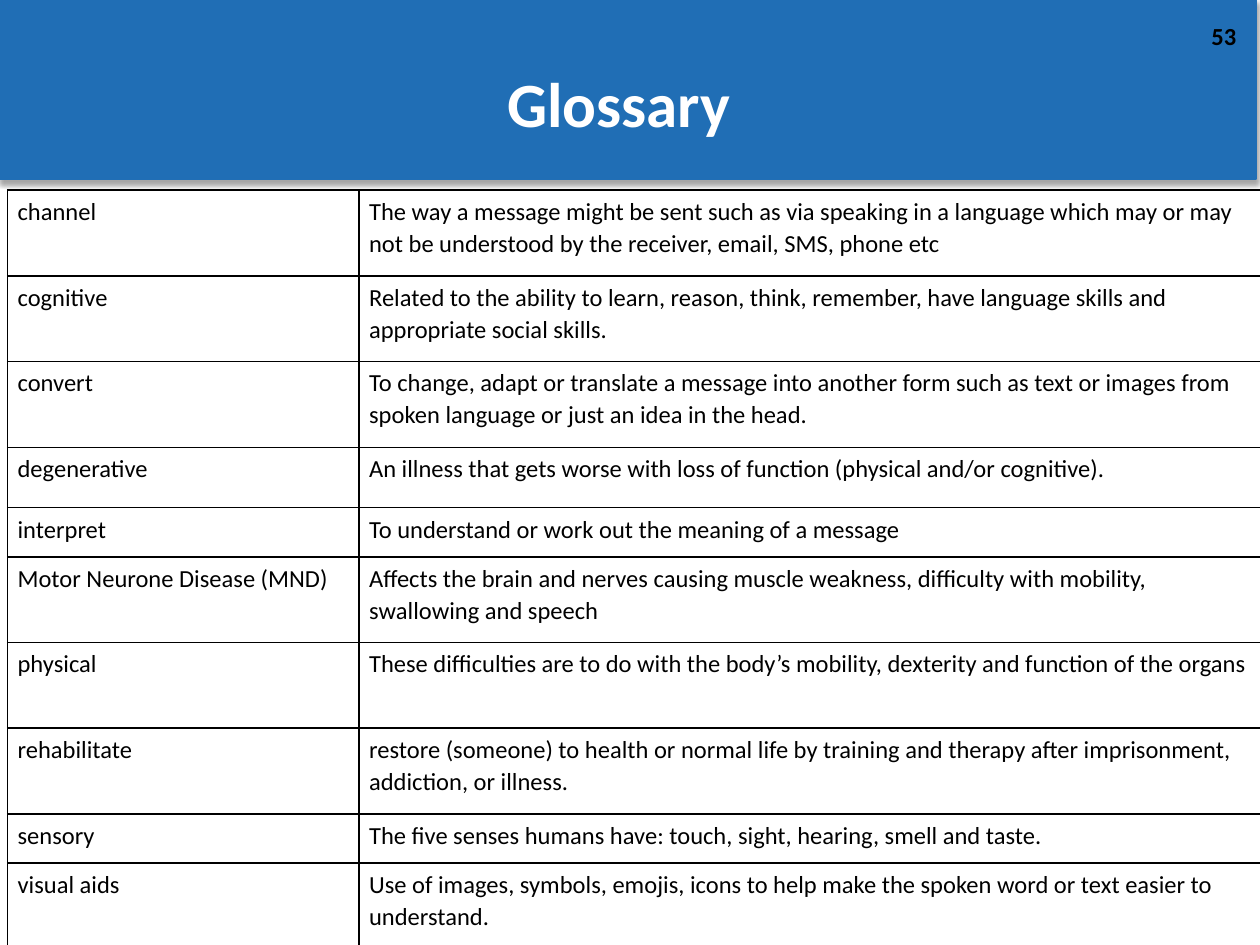
from dataclasses import dataclass

from lxml.etree import SubElement
from pptx import Presentation
from pptx.dml.color import RGBColor
from pptx.enum.shapes import MSO_SHAPE as Shape
from pptx.enum.text import MSO_ANCHOR as Anchor, PP_ALIGN as Align
from pptx.oxml.ns import qn
from pptx.util import Inches, Pt


@dataclass(frozen=True)
class Theme:
    font: str = "Calibri"
    banner: RGBColor = RGBColor(0x20, 0x6E, 0xB5)
    ink: RGBColor = RGBColor(0, 0, 0)
    paper: RGBColor = RGBColor(0xFF, 0xFF, 0xFF)
    title_size: Pt = Pt(36)
    body_size: Pt = Pt(14)
    rule_width: Pt = Pt(1)


THEME = Theme()
COLUMN_WIDTHS = (2.79, 7.16)
TALL, MEDIUM, SHORT = 0.68, 0.48, 0.39
GLOSSARY = [
    (TALL, "channel", "The way a message might be sent such as via speaking in a language "
     "which may or may not be understood by the receiver, email, SMS, phone etc"),
    (TALL, "cognitive", "Related to the ability to learn, reason, think, remember, "
     "have language skills and appropriate social skills."),
    (TALL, "convert", "To change, adapt or translate a message into another form such as "
     "text or images from spoken language or just an idea in the head."),
    (MEDIUM, "degenerative",
     "An illness that gets worse with loss of function (physical and/or cognitive)."),
    (SHORT, "interpret", "To understand or work out the meaning of a message"),
    (TALL, "Motor Neurone Disease (MND)", "Affects the brain and nerves causing muscle "
     "weakness, difficulty with mobility, swallowing and speech"),
    (TALL, "physical", "These difficulties are to do with the body’s mobility, "
     "dexterity and function of the organs"),
    (TALL, "rehabilitate", "restore (someone) to health or normal life by training and "
     "therapy after imprisonment, addiction, or illness."),
    (SHORT, "sensory", "The five senses humans have: touch, sight, hearing, smell and taste."),
    (TALL, "visual aids", "Use of images, symbols, emojis, icons to help make the spoken "
     "word or text easier to understand."),
]


def set_all(target, values):
    for name, value in values.items():
        setattr(target, name, value)


def write(frame, text, size, color, bold=False, **para_format):
    para = frame.paragraphs[0]
    set_all(para, para_format)
    span = para.add_run()
    span.text = text
    set_all(span.font, {"name": THEME.font, "size": size, "bold": bold})
    span.font.color.rgb = color


def add_shadow(shape):
    """Give the shape a soft shadow that falls straight down."""
    shape.shadow.inherit = False
    effects = shape._element.spPr.find(qn("a:effectLst"))
    shadow = SubElement(effects, qn("a:outerShdw"), blurRad=str(Pt(3.1)),
                        dist=str(Pt(1.8)), dir="5400000", rotWithShape="0")
    color = SubElement(shadow, qn("a:srgbClr"), val=str(THEME.ink))
    SubElement(color, qn("a:alpha"), val="35000")


def add_banner(page):
    banner = page.shapes.add_shape(Shape.RECTANGLE, 0, 0, Inches(9.97), Inches(1.42))
    banner.fill.solid()
    banner.fill.fore_color.rgb = THEME.banner
    banner.line.color.rgb = THEME.banner
    banner.line.width = Pt(0.75)
    add_shadow(banner)


def add_label(page, area, text, size, color, align, anchor=Anchor.TOP):
    box = page.shapes.add_textbox(*map(Inches, area))
    set_all(box.text_frame, {"word_wrap": True, "vertical_anchor": anchor})
    write(box.text_frame, text, size, color, bold=True, alignment=align)


def add_borders(cell):
    """Rule all four sides; borders must come before the fill in the cell."""
    properties = cell._tc.get_or_add_tcPr()
    for side in ("lnL", "lnR", "lnT", "lnB"):
        line = SubElement(properties, qn(f"a:{side}"), w=str(THEME.rule_width))
        fill = SubElement(line, qn("a:solidFill"))
        SubElement(fill, qn("a:srgbClr"), val=str(THEME.ink))


def fill_cell(cell, text):
    set_all(cell, {"margin_left": Inches(0.08), "margin_right": Inches(0.08),
                   "margin_top": Inches(0.04), "margin_bottom": Inches(0.04)})
    add_borders(cell)
    cell.fill.solid()
    cell.fill.fore_color.rgb = THEME.paper
    write(cell.text_frame, text, THEME.body_size, THEME.ink,
          line_spacing=1.07, space_after=Pt(8))


def add_glossary(page):
    height = sum(row_height for row_height, *_ in GLOSSARY)
    table = page.shapes.add_table(
        len(GLOSSARY), len(COLUMN_WIDTHS), Inches(0.06), Inches(1.51),
        Inches(sum(COLUMN_WIDTHS)), Inches(height)).table
    set_all(table, {"first_row": False, "horz_banding": False})
    for column, width in zip(table.columns, COLUMN_WIDTHS):
        column.width = Inches(width)
    for row, (row_height, *texts) in zip(table.rows, GLOSSARY):
        row.height = Inches(row_height)
        for cell, text in zip(row.cells, texts):
            fill_cell(cell, text)


def main():
    deck = Presentation()
    set_all(deck, {"slide_width": Inches(10), "slide_height": Inches(7.5)})
    page = deck.slides.add_slide(deck.slide_layouts[6])
    add_banner(page)
    add_label(page, (9.5, 0.12, 0.41, 0.4), "53", THEME.body_size, THEME.ink, Align.RIGHT)
    add_glossary(page)
    add_label(page, (0.5, 0.52, 8.94, 0.58), "Glossary ", THEME.title_size, THEME.paper,
              Align.CENTER, Anchor.MIDDLE)
    deck.save("out.pptx")


if __name__ == "__main__":
    main()
